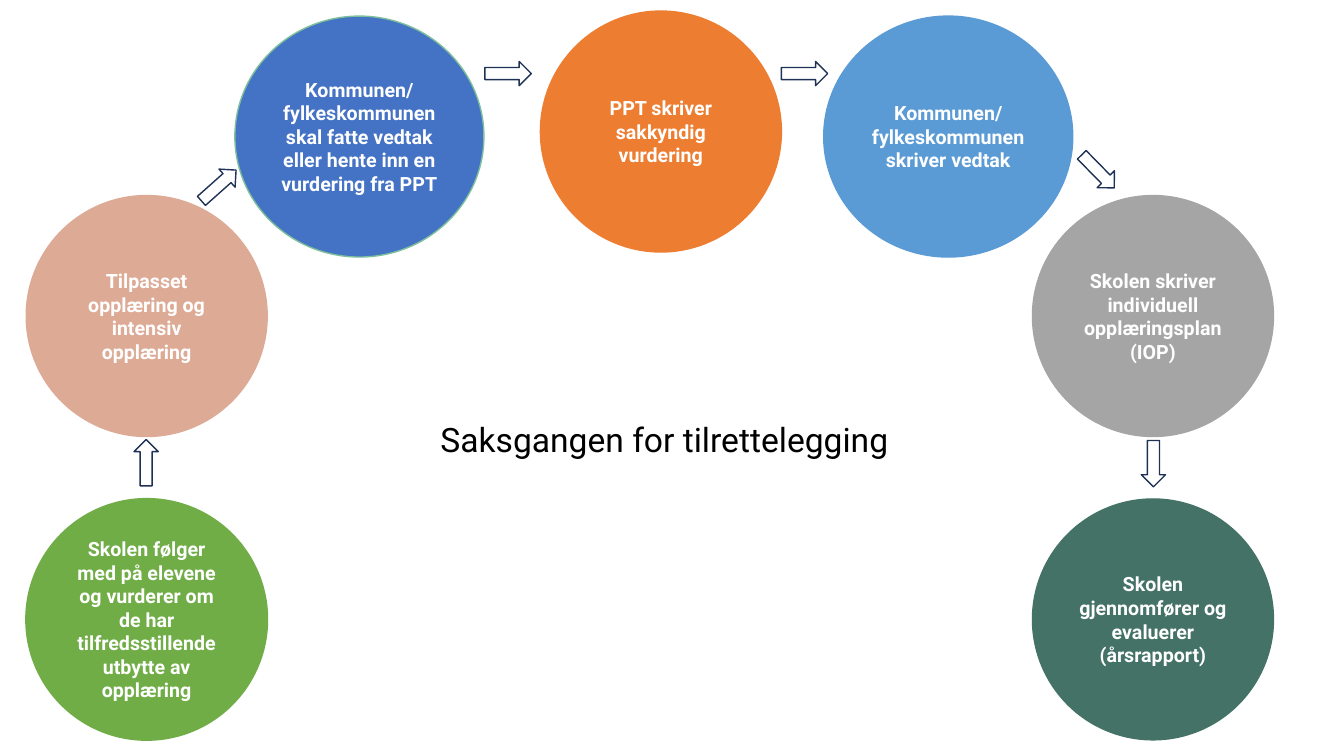
from pptx import Presentation
from pptx.dml.color import RGBColor
from pptx.enum.shapes import MSO_SHAPE as SHAPE
from pptx.enum.text import MSO_ANCHOR as ANCHOR, MSO_AUTO_SIZE as AUTO, PP_ALIGN as ALIGN
from pptx.util import Inches, Pt


def rgb(value):
    return RGBColor.from_string(value)


class Deck:
    font = "Roboto"
    white = "FFFFFF"
    black = "000000"
    navy = "1E3256"
    diameter = 2.39
    arrow_size = (0.46, 0.24)

    def __init__(self, slide):
        self.slide = slide

    def shape(self, kind, left, top, width, height, fill, line, weight=1):
        sp = self.slide.shapes.add_shape(
            kind, Inches(left), Inches(top), Inches(width), Inches(height))
        sp.shadow.inherit = False
        sp.fill.solid()
        sp.fill.fore_color.rgb = rgb(fill)
        sp.line.color.rgb = rgb(line)
        sp.line.width = Pt(weight)
        return sp

    def set_text(self, tf, text, size, color, align, bold=False):
        tf.word_wrap = True
        p = tf.paragraphs[0]
        p.text = text
        p.alignment = align
        p.font.name = self.font
        p.font.size = Pt(size)
        p.font.bold = bold
        p.font.color.rgb = rgb(color)

    def step(self, text, left, top, fill, width=diameter, line=None, weight=1):
        sp = self.shape(SHAPE.FLOWCHART_CONNECTOR, left, top, width,
                        self.diameter, fill, line or fill, weight)
        tf = sp.text_frame
        tf.vertical_anchor = ANCHOR.MIDDLE
        self.set_text(tf, text, 14, self.white, ALIGN.CENTER, bold=True)

    def arrow(self, left, top, rotation=0):
        sp = self.shape(SHAPE.RIGHT_ARROW, left, top, *self.arrow_size,
                        self.white, self.navy)
        sp.rotation = rotation

    def title(self, text, left, top, width, height):
        sp = self.slide.shapes.add_textbox(
            Inches(left), Inches(top), Inches(width), Inches(height))
        self.set_text(sp.text_frame, text, 24, self.black, ALIGN.LEFT)
        sp.text_frame.auto_size = AUTO.SHAPE_TO_FIT_TEXT


def main():
    prs = Presentation()
    prs.slide_width, prs.slide_height = Inches(13.33), Inches(7.5)
    s = Deck(prs.slides.add_slide(prs.slide_layouts[6]))

    left_col, right_col = 0.26, 10.24
    upper_row, lower_row = 1.94, 4.95
    wide, shoulder_row = 2.47, 0.16

    s.step("Skolen følger med på elevene og vurderer om de har "
           "tilfredsstillende utbytte av opplæring",
           left_col, lower_row, "70AD47", weight=1.5)
    s.step("Tilpasset opplæring og intensiv opplæring",
           left_col, upper_row, "DDAA95")
    s.step("Kommunen/ fylkeskommunen skal fatte vedtak eller hente inn "
           "en vurdering fra PPT",
           2.33, shoulder_row, "4472C4", width=wide, line="7DBF9D")
    s.step("PPT skriver sakkyndig vurdering", 5.36, 0.11, "ED7D31")
    s.step("Kommunen/ fylkeskommunen skriver vedtak",
           8.17, shoulder_row, "5B9BD5", width=wide)
    s.step("Skolen skriver individuell opplæringsplan (IOP)",
           right_col, upper_row, "A5A5A5")
    s.step("Skolen gjennomfører og evaluerer (årsrapport)",
           right_col, lower_row, "447266")

    for left, top, rotation in (
        (1.22, 4.47, 270),
        (1.94, 1.72, 318.3),
        (4.81, 0.61, 0),
        (7.75, 0.61, 0),
        (10.66, 1.58, 45.5),
        (11.21, 4.48, 90),
    ):
        s.arrow(left, top, rotation)

    s.title("Saksgangen for tilrettelegging", 4.27, 4.11, 4.79, 0.5)
    prs.save("out.pptx")


if __name__ == "__main__":
    main()
